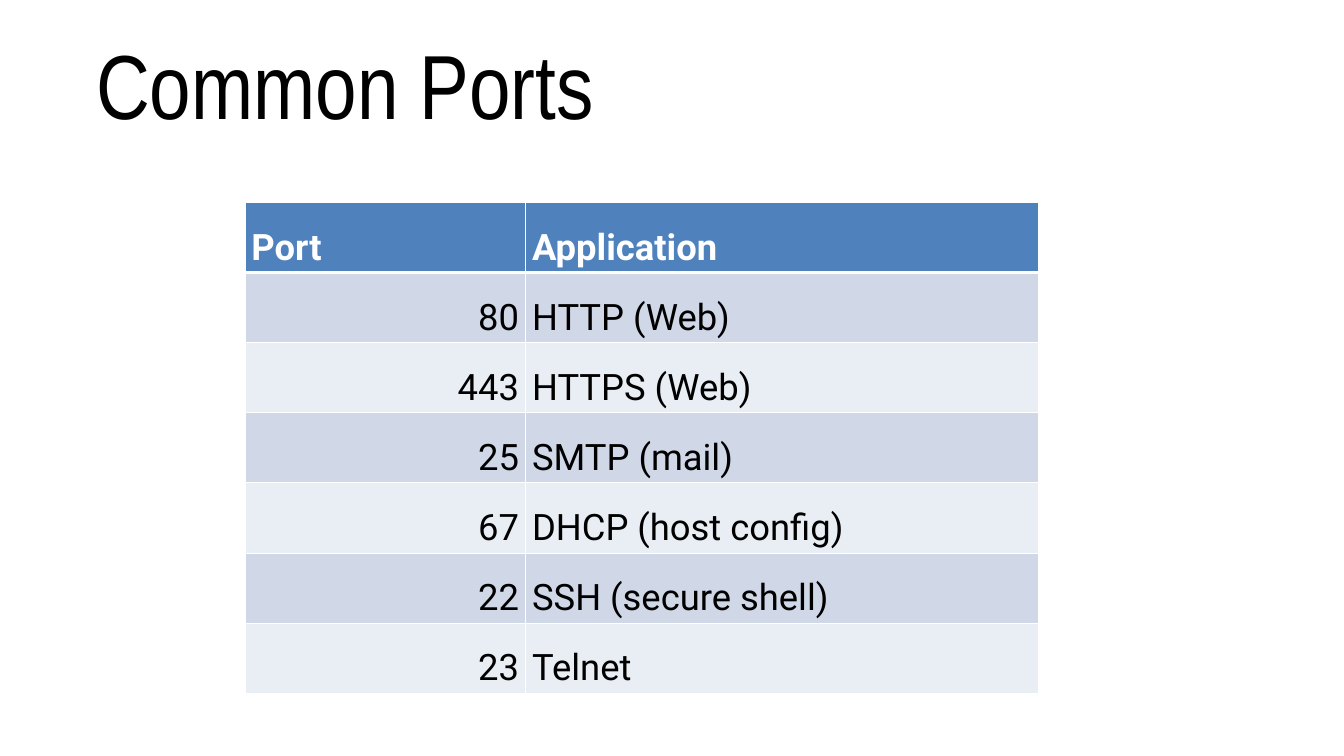
from dataclasses import dataclass

from lxml import etree
from pptx import Presentation
from pptx import util as u
from pptx.dml.color import RGBColor
from pptx.enum import text
from pptx.oxml import ns

WIDTH, HEIGHT = 26.67, 15


@dataclass(frozen=True)
class Theme:
    ink: str = "000000"
    paper: str = "FFFFFF"
    head: str = "4F81BD"
    bands: tuple = ("D0D8E8", "E9EDF4")
    title_font: str = "Arial Narrow"
    body_font: str = "Roboto"
    title_size: int = 130
    body_size: int = 52
    leading: int = 90
    thin: int = 1
    thick: int = 4


@dataclass(frozen=True)
class Port:
    number: str
    app: str


THEME = Theme()
HEAD = Port("Port", "Application")
PORTS = [
    Port("80", "HTTP (Web)"),
    Port("443", "HTTPS (Web)"),
    Port("25", "SMTP (mail)"),
    Port("67", "DHCP (host config)"),
    Port("22", "SSH (secure shell)"),
    Port("23", "Telnet"),
]
COLS = (5.57, 10.18)
ROW = 1.36


def write(frame, words: str, *, font: str, size: int, color: str,
          bold: bool = False, align=text.PP_ALIGN.LEFT, leading=None) -> None:
    """Put one formatted paragraph into a text frame."""
    para = frame.paragraphs[0]
    para.alignment = align
    if leading:
        para.line_spacing = u.Pt(leading)
    run = para.add_run()
    run.text = words
    run.font.name, run.font.size, run.font.bold = font, u.Pt(size), bold
    run.font.color.rgb = RGBColor.from_string(color)


def edge(cell, side: str, width: int) -> None:
    """Draw one border of a cell; call in the order L, R, T, B."""
    props = cell._tc.get_or_add_tcPr()
    line = etree.SubElement(props, ns.qn(f"a:ln{side}"), w=str(u.Pt(width)))
    fill = etree.SubElement(line, ns.qn("a:solidFill"))
    etree.SubElement(fill, ns.qn("a:srgbClr"), val=THEME.paper)


def draw_title(slide, words: str) -> None:
    box = slide.shapes.add_textbox(u.Inches(1.85), u.Inches(0.39),
                                   u.Inches(22.97), u.Inches(2.5))
    frame = box.text_frame
    frame.word_wrap = True
    frame.vertical_anchor = text.MSO_ANCHOR.MIDDLE
    frame.margin_left = frame.margin_right = u.Inches(0.06)
    frame.margin_top = frame.margin_bottom = u.Inches(0.06)
    write(frame, words, font=THEME.title_font, size=THEME.title_size,
          color=THEME.ink)


def draw_cell(cell, words: str, row: int, col: int) -> None:
    top = row == 0
    cell.margin_left = cell.margin_right = u.Inches(0.13)
    cell.margin_top = cell.margin_bottom = u.Inches(0.07)

    # The rule below the header is heavier than the others
    widths = {"L": THEME.thin, "R": THEME.thin,
              "T": THEME.thick if row == 1 else THEME.thin,
              "B": THEME.thick if top else THEME.thin}
    for side, width in widths.items():
        edge(cell, side, width)

    cell.fill.solid()
    shade = THEME.head if top else THEME.bands[(row - 1) % 2]
    cell.fill.fore_color.rgb = RGBColor.from_string(shade)
    right = col == 0 and not top
    write(cell.text_frame, words, font=THEME.body_font, size=THEME.body_size,
          color=THEME.paper if top else THEME.ink, bold=top,
          align=text.PP_ALIGN.RIGHT if right else text.PP_ALIGN.LEFT,
          leading=THEME.leading)


def draw_table(slide, ports: list[Port]) -> None:
    rows = [HEAD, *ports]
    table = slide.shapes.add_table(
        len(rows), len(COLS), u.Inches(4.86), u.Inches(4.02),
        u.Inches(sum(COLS)), u.Inches(ROW * len(rows))).table
    for column, width in zip(table.columns, COLS):
        column.width = u.Inches(width)
    for r, port in enumerate(rows):
        table.rows[r].height = u.Inches(ROW)
        for c, words in enumerate((port.number, port.app)):
            draw_cell(table.cell(r, c), words, r, c)


def main() -> None:
    deck = Presentation()
    deck.slide_width, deck.slide_height = u.Inches(WIDTH), u.Inches(HEIGHT)
    slide = deck.slides.add_slide(deck.slide_layouts[6])

    # Heading, then the list of ports
    draw_title(slide, "Common Ports")
    draw_table(slide, PORTS)
    deck.save("out.pptx")


if __name__ == "__main__":
    main()
